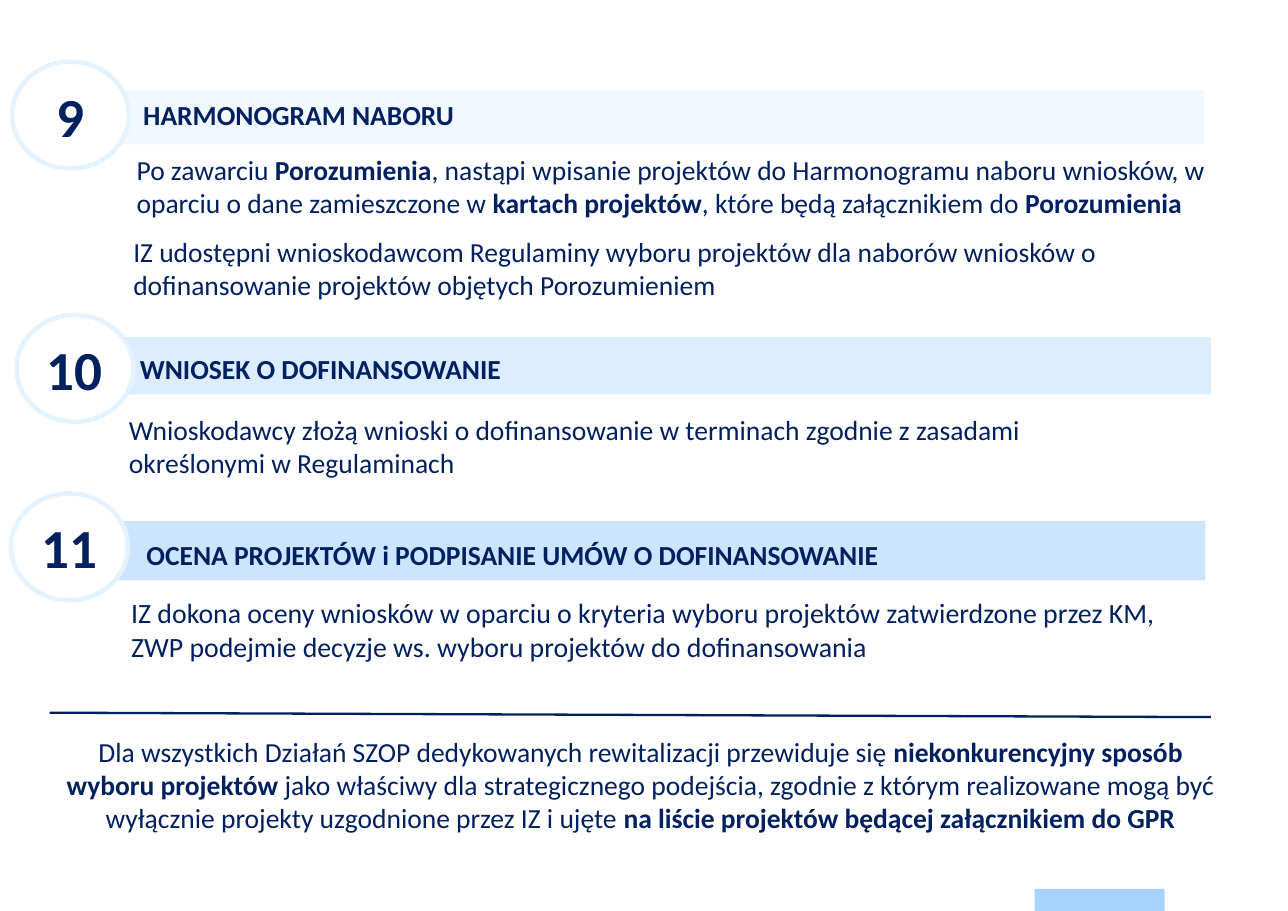
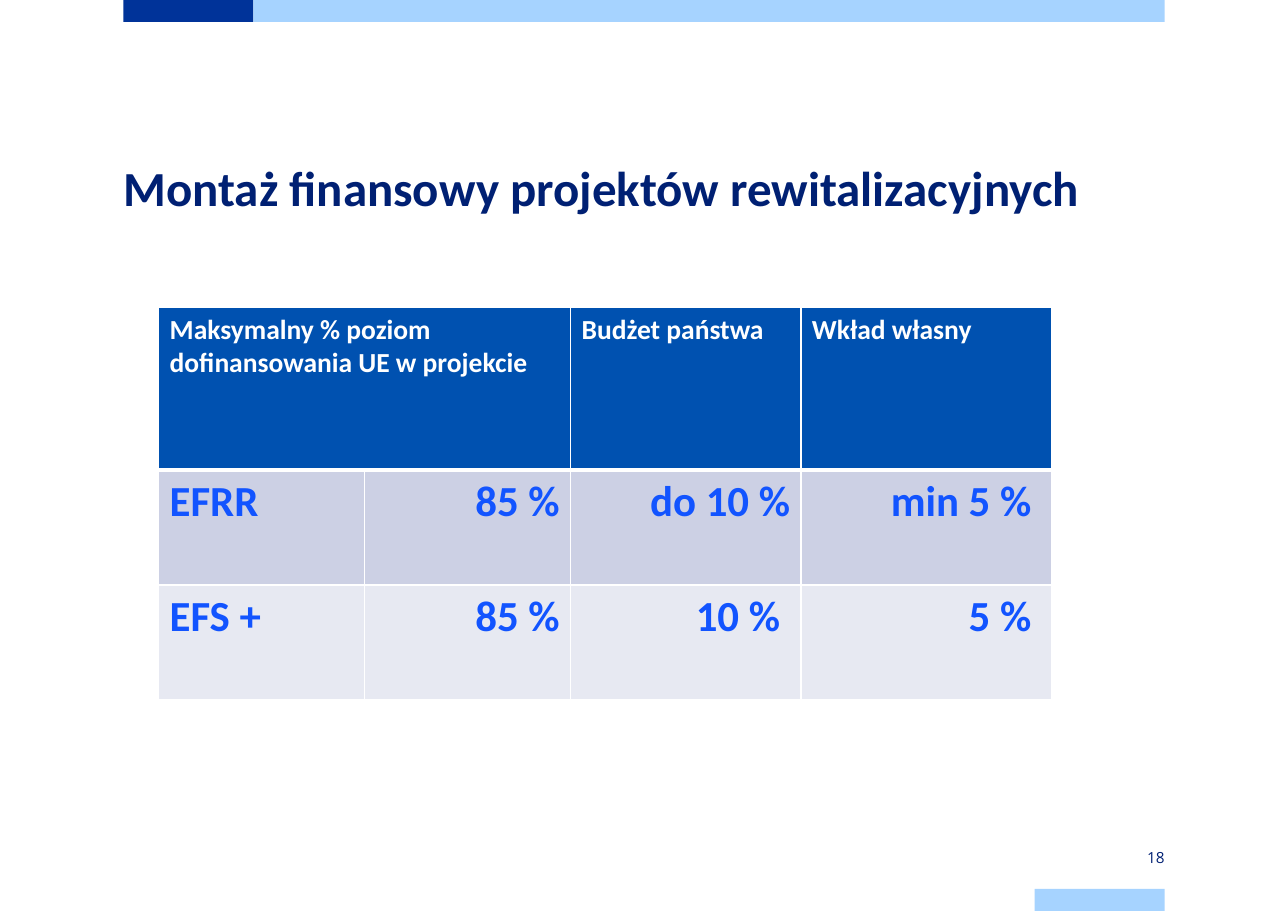
from lxml import etree
from pptx import Presentation
from pptx import util as u
from pptx.dml.color import RGBColor
from pptx.enum import shapes, text
from pptx.oxml.ns import qn

PX = 9144  # one hundredth of an inch
NAVY = RGBColor(0x00, 0x20, 0x60)
INK = RGBColor(0x00, 0x20, 0x73)
WHITE = RGBColor(0xFF, 0xFF, 0xFF)
DEEP = RGBColor(0x00, 0x33, 0x99)
SKY = RGBColor(0xA6, 0xD3, 0xFF)
PALE = RGBColor(0xDD, 0xEE, 0xFF)
AZURE = RGBColor(0x81, 0xC0, 0xFF)
RING = RGBColor(0xE5, 0xF2, 0xFF)
HEAD = RGBColor(0x00, 0x51, 0xB0)
VIVID = RGBColor(0x12, 0x54, 0xFF)
ROWS = [RGBColor(0xCC, 0xD0, 0xE4), RGBColor(0xE7, 0xE9, 0xF2)]
FONT = "Calibri"
LEFT, CENTER, RIGHT = (text.PP_ALIGN.LEFT, text.PP_ALIGN.CENTER,
                       text.PP_ALIGN.RIGHT)
MIDDLE = text.MSO_ANCHOR.MIDDLE
WIDTH, HEIGHT = 1169, 827


def emu(*box):
    return [n * PX for n in box]


def write(frame, words, size=18, color=NAVY, bold=False, align=LEFT, face=FONT):
    """Fill a frame, one paragraph a line; words between ** are bold."""
    frame.word_wrap = True
    for i, line in enumerate(words.split("\n")):
        para = frame.add_paragraph() if i else frame.paragraphs[0]
        para.alignment = align
        for j, part in enumerate(line.split("**")):
            if not part:
                continue
            run = para.add_run()
            run.text = part
            font = run.font
            font.name, font.size = face, u.Pt(size)
            font.bold = bold or j % 2 == 1
            font.color.rgb = color


def label(slide, box, words, **style):
    """Add a text box without insets."""
    frame = slide.shapes.add_textbox(*emu(*box)).text_frame
    frame.margin_left = frame.margin_right = 0
    frame.margin_top = frame.margin_bottom = 0
    write(frame, words, **style)
    return frame


def bar(slide, box, color, alpha=100):
    shape = slide.shapes.add_shape(shapes.MSO_SHAPE.RECTANGLE, *emu(*box))
    shape.shadow.inherit = False
    shape.fill.solid()
    shape.fill.fore_color.rgb = color
    shape.line.fill.background()
    if alpha < 100:
        tone = shape._element.spPr.find(".//" + qn("a:srgbClr"))
        etree.SubElement(tone, qn("a:alpha"), val=str(alpha * 1000))


def header(slide):
    bar(slide, (112, 0, 118, 20), DEEP)
    bar(slide, (230, 0, 827, 20), SKY)


def footer(slide):
    bar(slide, (939, HEIGHT - 20, 118, 20), SKY)


def badge(slide, x, y, number):
    disc = slide.shapes.add_shape(shapes.MSO_SHAPE.OVAL, *emu(x, y, 106, 97))
    disc.shadow.inherit = False
    disc.fill.solid()
    disc.fill.fore_color.rgb = WHITE
    disc.line.color.rgb = RING
    disc.line.width = u.Pt(3)
    disc.text_frame.vertical_anchor = MIDDLE
    write(disc.text_frame, number, size=36, bold=True, align=CENTER)


def step(slide, x, y, number, band, head, notes):
    """Draw a numbered step; band, head and notes are offset from x, y."""
    dx, dy, high, color = band
    bar(slide, (x + dx, y + dy, 1031, high), color, alpha=40)
    dx, dy, words = head
    label(slide, (x + dx, y + dy, 800, 30), words, bold=True)
    for dx, dy, wide, size, words in notes:
        label(slide, (x + dx, y + dy, wide, 62), words, size=size)
    badge(slide, x, y, number)


def rule(slide, x1, y1, x2, y2):
    line = slide.shapes.add_connector(shapes.MSO_CONNECTOR.STRAIGHT,
                                      *emu(x1, y1, x2, y2))
    line.line.color.rgb = NAVY
    line.line.width = u.Pt(1.5)
    etree.SubElement(line._element.spPr, qn("a:effectLst"))


def edge(cell, side, width):
    line = etree.SubElement(cell._tc.get_or_add_tcPr(), qn("a:ln" + side),
                            w=str(u.Pt(width)))
    fill = etree.SubElement(line, qn("a:solidFill"))
    etree.SubElement(fill, qn("a:srgbClr"), val=str(WHITE))


def paint(cell, color, base=1, top=1):
    for side, width in zip("LRTB", (1, 1, top, base)):
        edge(cell, side, width)
    cell.fill.solid()
    cell.fill.fore_color.rgb = color


def grid(slide, x, y, cols, rows, heads, data):
    """Draw the funding table; the first heading spans two columns."""
    box = emu(x, y, sum(cols), sum(rows))
    table = slide.shapes.add_table(len(rows), len(cols), *box).table
    for col, wide in zip(table.columns, cols):
        col.width = u.Emu(wide * PX)
    for row, high in zip(table.rows, rows):
        row.height = u.Emu(high * PX)
    table.cell(0, 0).merge(table.cell(0, 1))
    for c in range(len(cols)):
        paint(table.cell(0, c), HEAD, base=3)
    for c, words in heads.items():
        write(table.cell(0, c).text_frame, words, color=WHITE, bold=True)
    for r, line in enumerate(data, 1):
        for c, (words, inset) in enumerate(line):
            cell = table.cell(r, c)
            paint(cell, ROWS[r - 1], top=3 if r == 1 else 1)
            cell.margin_right = u.Emu(inset * PX)
            write(cell.text_frame, words, size=28, color=VIVID, bold=True,
                  align=RIGHT if c else LEFT)


def stages(slide):
    footer(slide)
    step(slide, 11, 56, "9", (51, 26, 49, PALE),
         (119, 33, "HARMONOGRAM NABORU"),
         [(113, 83, 990, 18,
           "Po zawarciu **Porozumienia**, nastąpi wpisanie projektów do "
           "Harmonogramu naboru wniosków, w oparciu o dane zamieszczone w "
           "**kartach projektów**, które będą załącznikiem do "
           "**Porozumienia**"),
          (110, 157, 978, 18,
           "IZ udostępni wnioskodawcom Regulaminy wyboru projektów dla "
           "naborów wniosków o dofinansowanie projektów objętych "
           "Porozumieniem")])
    step(slide, 15, 286, "10", (53, 20, 52, SKY),
         (112, 34, "WNIOSEK O DOFINANSOWANIE"),
         [(102, 89, 911, 18,
           "Wnioskodawcy złożą wnioski o dofinansowanie w terminach zgodnie "
           "z zasadami określonymi w Regulaminach")])
    step(slide, 10, 448, "11", (53, 25, 54, AZURE),
         (123, 40, "OCENA PROJEKTÓW i PODPISANIE UMÓW O DOFINANSOWANIE"),
         [(109, 93, 943, 18.2,
           "IZ dokona oceny wniosków w oparciu o kryteria wyboru projektów "
           "zatwierdzone przez KM,\n"
           "ZWP podejmie decyzje ws. wyboru projektów do dofinansowania")])
    rule(slide, 45, 647, 1099, 651)
    label(slide, (60, 667, 1043, 91),
          "Dla wszystkich Działań SZOP dedykowanych rewitalizacji przewiduje "
          "się **niekonkurencyjny sposób wyboru projektów** jako właściwy dla "
          "strategicznego podejścia, zgodnie z którym realizowane mogą być "
          "wyłącznie projekty uzgodnione przez IZ i ujęte **na liście "
          "projektów będącej załącznikiem do GPR**", align=CENTER)


def funding(slide):
    header(slide)
    footer(slide)
    title = label(slide, (112, 146, 945, 75),
                  "Montaż finansowy projektów rewitalizacyjnych",
                  size=32, color=INK, bold=True)
    title.paragraphs[0].line_spacing = u.Pt(36)
    page = label(slide, (939, 768, 118, 20), "18", size=10, color=INK,
                 align=RIGHT, face="Open Sans")
    page.vertical_anchor = MIDDLE
    grid(slide, 144, 279, [187, 187, 209, 228], [148, 104, 104],
         {0: "Maksymalny % poziom dofinansowania UE w projekcie",
          2: "Budżet państwa", 3: "Wkład własny"},
         [[("EFRR", 10), ("85 %", 10), ("do 10 %", 10), ("min 5 %", 19)],
          [("EFS +", 10), ("85 %", 10), ("10 %", 19), ("5 %", 19)]])


def main():
    deck = Presentation()
    deck.slide_width, deck.slide_height = emu(WIDTH, HEIGHT)
    for build in (stages, funding):
        build(deck.slides.add_slide(deck.slide_layouts[6]))
    deck.save("out.pptx")


if __name__ == "__main__":
    main()
